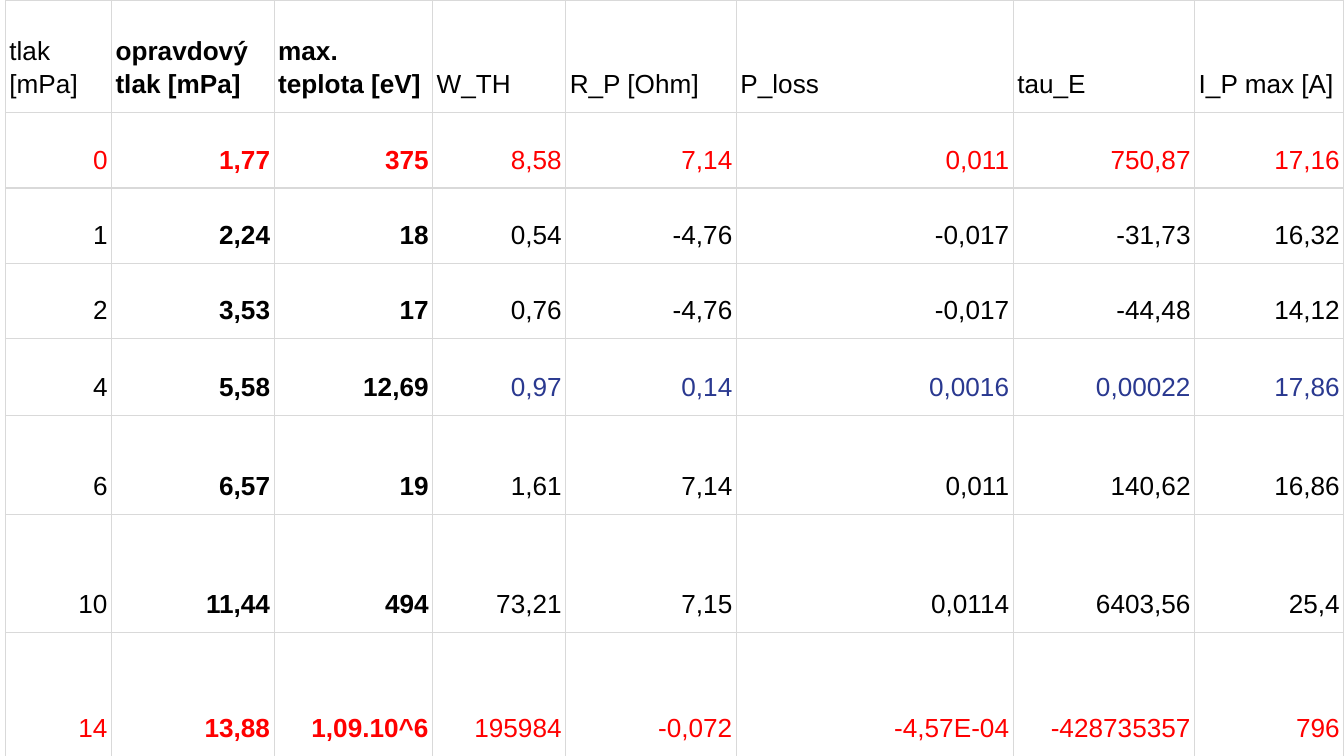
from lxml import etree
from pptx import Presentation
from pptx import util as u
from pptx.dml import color
from pptx.enum import text
from pptx.oxml import ns

COLORS = {"black": "000000", "red": "FF0000", "blue": "2A3990",
          "grid": "D9D9D9", "white": "FFFFFF"}
COL_WIDTHS = [0.79, 1.21, 1.18, 0.99, 1.27, 2.06, 1.35, 1.11]
ROW_HEIGHTS = [0.84, 0.56, 0.56, 0.56, 0.57, 0.74, 0.88, 0.92]
ROWS = [
    ["tlak [mPa]", "opravdový tlak [mPa]", "max. teplota [eV]", "W_TH",
     "R_P [Ohm]", "P_loss", "tau_E", "I_P max [A]"],
    ["0", "1,77", "375", "8,58", "7,14", "0,011", "750,87", "17,16"],
    ["1", "2,24", "18", "0,54", "-4,76", "-0,017", "-31,73", "16,32"],
    ["2", "3,53", "17", "0,76", "-4,76", "-0,017", "-44,48", "14,12"],
    ["4", "5,58", "12,69", "0,97", "0,14", "0,0016", "0,00022", "17,86"],
    ["6", "6,57", "19", "1,61", "7,14", "0,011", "140,62", "16,86"],
    ["10", "11,44", "494", "73,21", "7,15", "0,0114", "6403,56", "25,4"],
    ["14", "13,88", "1,09.10^6", "195984", "-0,072", "-4,57E-04",
     "-428735357", "796"],
]
BOLD_COLS = (1, 2)
RED_ROWS = (1, 7)
BLUE_ROW, BLUE_FROM_COL = 4, 3
FILLED_COLS = {3: range(2, 5), 4: range(2, 8)}


def text_color(row, col):
    if row in RED_ROWS:
        return "red"
    return "blue" if row == BLUE_ROW and col >= BLUE_FROM_COL else "black"


class Deck:
    def __init__(self, width, font="Arial", size=14):
        """Start a 16:9 deck with one blank slide."""
        self.prs = Presentation()
        self.prs.slide_width = u.Inches(width)
        self.prs.slide_height = u.Inches(width * 9 / 16)
        self.font, self.size = font, size
        self.s = self.prs.slides.add_slide(self.prs.slide_layouts[6])

    def table(self, left, top, widths, heights):
        frame = self.s.shapes.add_table(
            len(heights), len(widths), u.Inches(left), u.Inches(top),
            u.Inches(sum(widths)), u.Inches(sum(heights)))
        tbl = frame.table
        tbl.first_row = tbl.horz_banding = False
        for column, width in zip(tbl.columns, widths):
            column.width = u.Inches(width)
        for row, height in zip(tbl.rows, heights):
            row.height = u.Inches(height)
        return tbl

    def cell(self, cell, content, hue, bold, align, filled):
        cell.margin_left = cell.margin_right = u.Inches(0.03)
        cell.margin_top = cell.margin_bottom = u.Inches(0.1)
        cell.vertical_anchor = text.MSO_ANCHOR.BOTTOM
        p = cell.text_frame.paragraphs[0]
        p.alignment, p.line_spacing = align, 1.15
        r = p.add_run()
        r.text = content
        r.font.name, r.font.size, r.font.bold = self.font, u.Pt(self.size), bold
        r.font.color.rgb = color.RGBColor.from_string(COLORS[hue])
        if filled:
            cell.fill.solid()
            cell.fill.fore_color.rgb = color.RGBColor.from_string(COLORS["white"])
        else:
            cell.fill.background()
        self.borders(cell)

    def borders(self, cell):
        """Draw the grid line on all four sides, ahead of the cell's fill."""
        props = cell._tc.get_or_add_tcPr()
        for i, side in enumerate(("lnL", "lnR", "lnT", "lnB")):
            ln = etree.Element(ns.qn(f"a:{side}"), w=str(u.Pt(0.75)))
            fill = etree.SubElement(ln, ns.qn("a:solidFill"))
            etree.SubElement(fill, ns.qn("a:srgbClr"), val=COLORS["grid"])
            props.insert(i, ln)


def main():
    deck = Deck(10)
    tbl = deck.table(0.04, 0, COL_WIDTHS, ROW_HEIGHTS)
    for i, row in enumerate(ROWS):
        align = text.PP_ALIGN.RIGHT if i else text.PP_ALIGN.LEFT
        for j, content in enumerate(row):
            deck.cell(tbl.cell(i, j), content, text_color(i, j),
                      j in BOLD_COLS, align, j in FILLED_COLS.get(i, ()))
    deck.prs.save("out.pptx")


if __name__ == "__main__":
    main()
